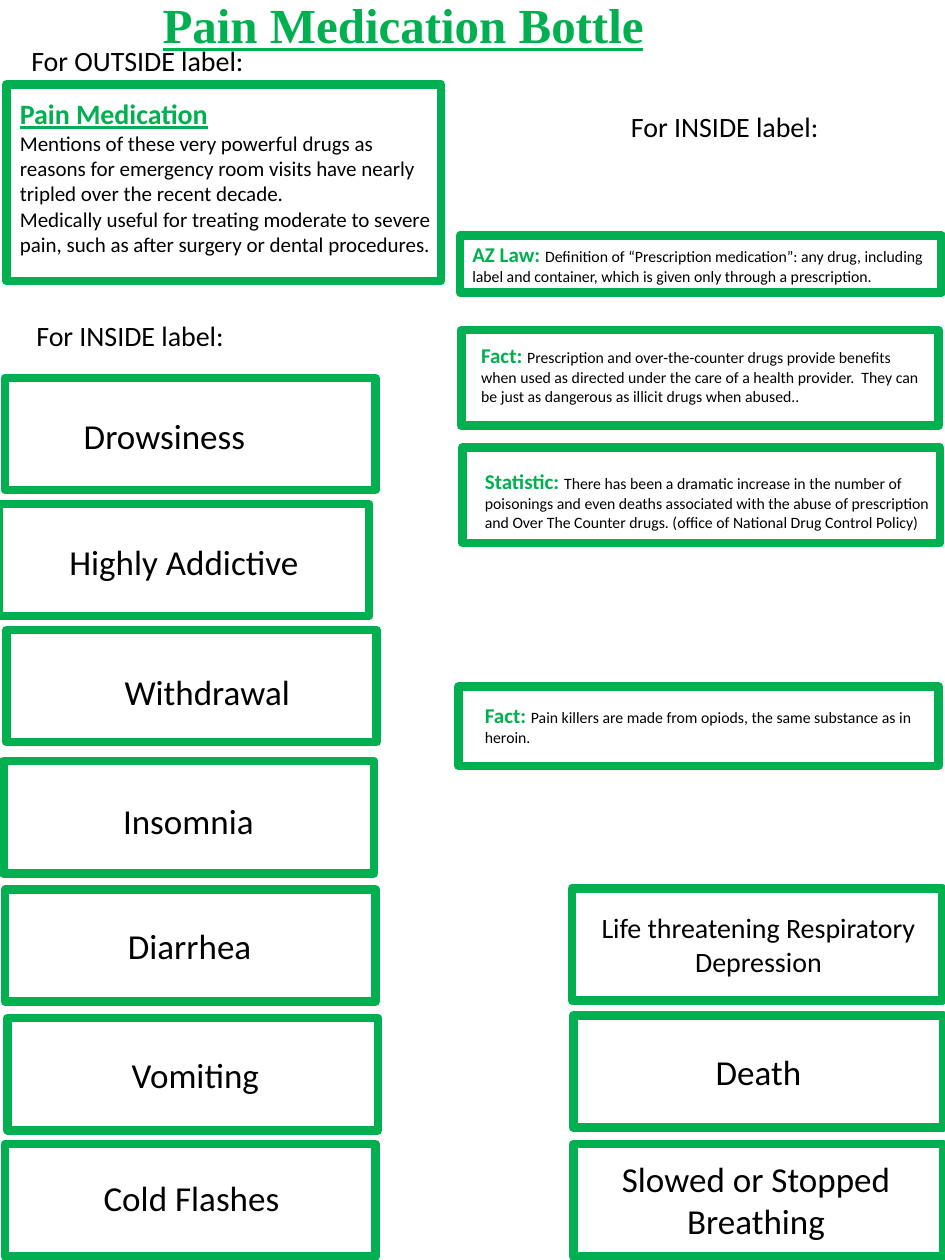
from pptx import Presentation
from pptx import util as u
from pptx.dml.color import RGBColor
from pptx.enum import shapes, text

GREEN, BLACK = "00B050", "000000"
EFFECT_W, EFFECT_H = 2.94, 0.89


def rgb(value):
    """Return the colour for a hex string."""
    return RGBColor.from_string(value)


def style(font, size, color=BLACK, bold=False, underline=False, name="Calibri"):
    """Format the font of a paragraph or run."""
    font.name, font.size = name, u.Pt(size)
    font.bold, font.underline = bold, underline
    font.color.rgb = rgb(color)


def frame(s, x, y, w, h):
    """Draw an empty green frame."""
    sp = s.shapes.add_shape(shapes.MSO_SHAPE.RECTANGLE, *map(u.Inches, (x, y, w, h)))
    sp.shadow.inherit = False
    sp.fill.background()
    sp.line.color.rgb = rgb(GREEN)
    sp.line.width = u.Pt(5)


def text_box(s, x, y, w, h, wrap=True):
    """Add a text box and return its text frame."""
    tf = s.shapes.add_textbox(*map(u.Inches, (x, y, w, h))).text_frame
    tf.word_wrap = wrap
    return tf


def title(s, x, y, w, h):
    """Place and format the slide title."""
    sp = s.shapes.title
    sp.left, sp.top, sp.width, sp.height = map(u.Inches, (x, y, w, h))
    tf = sp.text_frame
    tf.word_wrap = False
    tf.auto_size = text.MSO_AUTO_SIZE.NONE
    tf.vertical_anchor = text.MSO_ANCHOR.TOP
    p = tf.paragraphs[0]
    p.text = "Pain Medication Bottle"
    p.alignment = text.PP_ALIGN.LEFT
    style(p.font, 28, GREEN, True, True, "Times New Roman")


def heading(s, x, y, w, words):
    """Add a heading that names a label side."""
    p = text_box(s, x, y, w, 0.37, False).paragraphs[0]
    p.text = words
    style(p.font, 16)


def outside_label(s, x, y, w, h):
    """Build the framed outside label."""
    frame(s, x, y, w, h)
    tf = text_box(s, x + 0.01, y + 0.05, 3.53, 1.38)
    lines = (
        "Pain Medication",
        "Mentions of these very powerful drugs as reasons for emergency room visits "
        "have nearly tripled over the recent decade.",
        "Medically useful for treating moderate to severe pain, such as after surgery "
        "or dental procedures.",
    )
    for i, line in enumerate(lines):
        p = tf.add_paragraph() if i else tf.paragraphs[0]
        p.text = line
        if i:
            style(p.font, 12)
        else:
            style(p.font, 16, GREEN, True, True)


def effect(s, x, y, words, dx, dy, w, h=0.44, size=20):
    """Build a framed side effect, its text offset by dx, dy."""
    frame(s, x, y, EFFECT_W, EFFECT_H)
    p = text_box(s, x + dx, y + dy, w, h, w > 2.5).paragraphs[0]
    p.text = words
    p.alignment = text.PP_ALIGN.CENTER
    style(p.font, size)


def fact(s, box, offset, size, lead, words):
    """Build a framed fact with a green lead-in."""
    frame(s, *box)
    p = text_box(s, box[0] + offset[0], box[1] + offset[1], *size).paragraphs[0]
    for words_part, fmt in ((lead + " ", (12, GREEN, True)), (words, (9,))):
        r = p.add_run()
        r.text = words_part
        style(r.font, *fmt)


def main():
    """Build and save the slide."""
    prs = Presentation()
    prs.slide_width, prs.slide_height = u.Inches(7.5), u.Inches(10)
    s = prs.slides.add_slide(prs.slide_layouts[5])

    title(s, 1.19, -0.09, 4.07, 0.58)
    heading(s, 0.15, 0.3, 1.9, "For OUTSIDE label:")
    heading(s, 4.91, 0.82, 1.7, "For INSIDE label:")
    heading(s, 0.19, 2.48, 1.7, "For INSIDE label:")
    outside_label(s, 0.05, 0.67, 3.45, 1.56)

    for args in (
        (0.04, 3, "Drowsiness", 0.52, 0.24, 1.49),
        (-0.01, 4, "Highly Addictive", 0.45, 0.24, 2.04),
        (0.05, 5, "Withdrawal", 0.83, 0.27, 1.53),
        (0.03, 6.04, "Insomnia", 0.84, 0.26, 1.25),
        (0.04, 7.06, "Diarrhea", 0.87, 0.23, 1.19),
        (0.06, 8.08, "Vomiting", 0.88, 0.23, 1.22),
        (0.04, 9.08, "Cold Flashes", -0.01, 0.21, 2.98),
        (4.54, 7.05, "Life threatening Respiratory Depression", 0.01, 0.13, 2.94, 0.65, 16),
        (4.55, 8.06, "Death", 0, 0.23, 2.94),
        (4.55, 9.08, "Slowed or Stopped Breathing", -0.01, 0.06, 2.92, 0.77),
    ):
        effect(s, *args)

    fact(s, (3.65, 1.87, 3.82, 0.45), (0, 0), (3.82, 0.45), "AZ Law:",
         "Definition of “Prescription medication”: any drug, including label and "
         "container, which is given only through a prescription.")
    fact(s, (3.66, 2.62, 3.79, 0.76), (0.06, 0.05), (3.75, 0.61), "Fact:",
         "Prescription and over-the-counter drugs provide benefits when used as "
         "directed under the care of a health provider.  They can be just as "
         "dangerous as illicit drugs when abused..")
    fact(s, (3.67, 3.55, 3.79, 0.76), (0.08, 0.12), (3.75, 0.61), "Statistic:",
         "There has been a dramatic increase in the number of poisonings and even "
         "deaths associated with the abuse of prescription and Over The Counter "
         "drugs. (office of National Drug Control Policy)")
    fact(s, (3.64, 5.45, 3.81, 0.63), (0.11, 0.08), (3.75, 0.47), "Fact:",
         "Pain killers are made from opiods, the same substance as in heroin.")

    prs.save("out.pptx")


if __name__ == "__main__":
    main()
